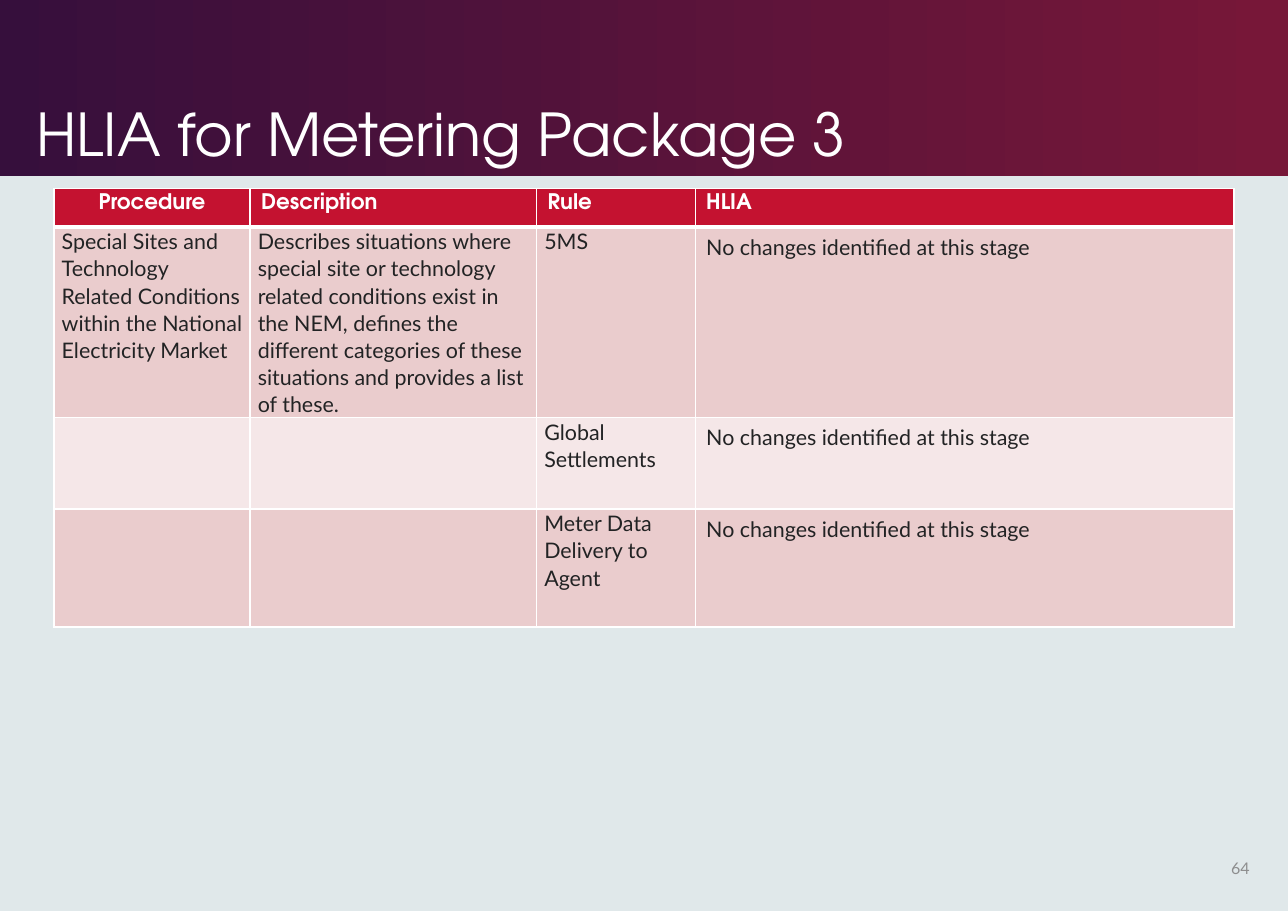
import pptx
import pptx.util
import pptx.dml.color
import pptx.enum.shapes
import pptx.enum.text
import pptx.oxml

Inches = pptx.util.Inches
Pt = pptx.util.Pt
ALIGN = pptx.enum.text.PP_ALIGN
ANCHOR = pptx.enum.text.MSO_ANCHOR

HEADING_FONT, BODY_FONT = "TeX Gyre Adventor", "Lato"
WHITE, INK, RED = "FFFFFF", "222324", "C41230"
BANDS = ["EACCCD", "F5E7E8"]
COLUMN_WIDTHS = [1.78, 2.6, 1.44, 4.89]
ROW_HEIGHTS = [0.35, 1.73, 0.83, 1.07]
HEADERS = ["Procedure", "Description", "Rule", "HLIA"]
NO_CHANGES = "No changes identified at this stage"
ROWS = [
    ["Special Sites and Technology Related Conditions within the National Electricity Market",
     "Describes situations where special site or technology related conditions exist in the NEM, "
     "defines the different categories of these situations and provides a list of these.",
     "5MS", NO_CHANGES],
    ["", "", "Global Settlements", NO_CHANGES],
    ["", "", "Meter Data Delivery to Agent", NO_CHANGES],
]


def rgb(value):
    """Turn a hex string into a colour."""
    return pptx.dml.color.RGBColor.from_string(value)


def add_run(p, text, size, font, color, bold=False):
    """Add one formatted run to a paragraph."""
    r = p.add_run()
    r.text = text
    r.font.size = Pt(size)
    r.font.name = font
    r.font.bold = bold
    r.font.color.rgb = rgb(color)


def add_text(slide, box, text, size, font, color, anchor, align=ALIGN.LEFT, spacing=1.0):
    """Add a wrapped one-paragraph text box."""
    tf = slide.shapes.add_textbox(*map(Inches, box)).text_frame
    tf.word_wrap = True
    tf.vertical_anchor = anchor
    p = tf.paragraphs[0]
    p.alignment = align
    p.line_spacing = spacing
    add_run(p, text, size, font, color)


def set_borders(cell, bottom):
    """Draw white borders around a cell, with the given bottom width."""
    tcPr = cell._tc.get_or_add_tcPr()
    widths = {"lnL": 1, "lnR": 1, "lnT": 1, "lnB": bottom}
    for i, (tag, width) in enumerate(widths.items()):
        tcPr.insert(i, pptx.oxml.parse_xml(
            f'<a:{tag} xmlns:a="http://schemas.openxmlformats.org/drawingml/2006/main" '
            f'w="{Pt(width)}"><a:solidFill><a:srgbClr val="{WHITE}"/></a:solidFill></a:{tag}>'))


def style_cell(cell, fill, margins, bottom=1):
    """Set the fill, margins and borders of a cell."""
    cell.fill.solid()
    cell.fill.fore_color.rgb = rgb(fill)
    cell.margin_left = cell.margin_right = Inches(margins[0])
    cell.margin_top = cell.margin_bottom = Inches(margins[1])
    set_borders(cell, bottom)


def add_banner(slide, box):
    """Add the gradient banner and its title."""
    left, top, width, height = box
    sp = slide.shapes.add_shape(pptx.enum.shapes.MSO_SHAPE.RECTANGLE, *map(Inches, box))
    sp.shadow.inherit = False
    sp.line.fill.background()
    sp.fill.gradient()
    sp.fill.gradient_angle = 0
    for stop, position, color in zip(sp.fill.gradient_stops, (0, 0.99), ("360F3C", "771738")):
        stop.position = position
        stop.color.rgb = rgb(color)
    add_text(slide, (left + 0.23, top + 0.16, 8.63, height - 0.17),
             "HLIA for Metering Package 3", 38.6, HEADING_FONT, WHITE, ANCHOR.BOTTOM, spacing=0.9)


def add_impact_table(slide, box):
    """Add the table of procedures, rules and impacts."""
    table = slide.shapes.add_table(len(ROW_HEIGHTS), len(COLUMN_WIDTHS), *map(Inches, box)).table
    for column, width in zip(table.columns, COLUMN_WIDTHS):
        column.width = Inches(width)
    for row, height in zip(table.rows, ROW_HEIGHTS):
        row.height = Inches(height)
    for c, text in enumerate(HEADERS):
        cell = table.cell(0, c)
        style_cell(cell, RED, (0.1, 0.05), bottom=3)
        p = cell.text_frame.paragraphs[0]
        p.alignment = ALIGN.CENTER if c == 0 else ALIGN.LEFT
        add_run(p, text, 14, HEADING_FONT, WHITE, bold=True)
    for r, texts in enumerate(ROWS):
        for c, text in enumerate(texts):
            cell = table.cell(r + 1, c)
            style_cell(cell, BANDS[r % 2], (0.1, 0.05) if c == 3 else (0.07, 0))
            if text:
                p = cell.text_frame.paragraphs[0]
                p.line_spacing = 1.06
                p.space_after = Pt(6)
                add_run(p, text, 14, BODY_FONT, INK)


def add_page_number(slide, box):
    """Add the page number."""
    add_text(slide, box, "64", 10.5, BODY_FONT, "8D8D8E", ANCHOR.MIDDLE, ALIGN.RIGHT)


def main():
    """Build and save the slide."""
    prs = pptx.Presentation()
    prs.slide_width, prs.slide_height = Inches(11.69), Inches(8.27)
    slide = prs.slides.add_slide(prs.slide_layouts[6])
    slide.background.fill.solid()
    slide.background.fill.fore_color.rgb = rgb("E0E8EA")
    add_banner(slide, (0, 0, 11.69, 1.6))
    add_impact_table(slide, (0.49, 1.71, sum(COLUMN_WIDTHS), sum(ROW_HEIGHTS)))
    add_page_number(slide, (10.89, 7.66, 0.55, 0.44))
    prs.save("out.pptx")


if __name__ == "__main__":
    main()
